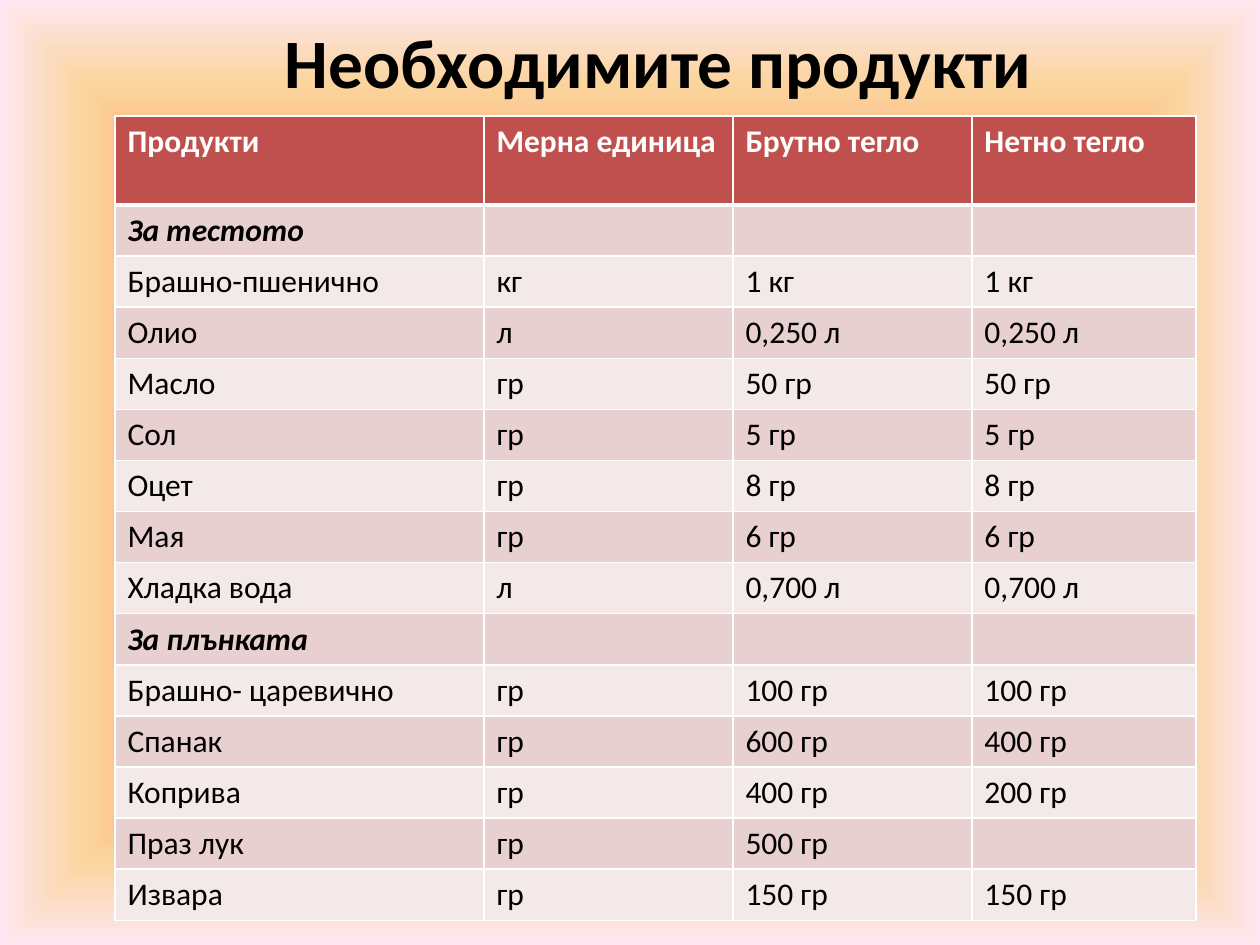
from lxml import etree
from pptx import Presentation
from pptx import util as u
from pptx.dml.color import RGBColor
from pptx.enum import text
from pptx.oxml import ns

TITLE = "Нeобходимите продукти"
HEADER = ("Продукти", "Мерна единица", "Брутно тегло", "Нетно тегло")
SECTIONS = {
    "За тестото": [
        ("Брашно-пшенично", "кг", "1 кг", "1 кг"),
        ("Олио", "л", "0,250 л", "0,250 л"),
        ("Масло", "гр", "50 гр", "50 гр"),
        ("Сол", "гр", "5 гр", "5 гр"),
        ("Оцет", "гр", "8 гр", "8 гр"),
        ("Мая", "гр", "6 гр", "6 гр"),
        ("Хладка вода", "л", "0,700 л", "0,700 л"),
    ],
    "За плънката": [
        ("Брашно- царевично", "гр", "100 гр", "100 гр"),
        ("Спанак", "гр", "600 гр", "400 гр"),
        ("Коприва", "гр", "400 гр", "200 гр"),
        ("Праз лук", "гр", "500 гр", ""),
        ("Извара", "гр", "150 гр", "150 гр"),
    ],
}
COLORS = {"header": "C0504D", "odd": "E8D0D0", "even": "F4E9E9",
          "white": "FFFFFF", "black": "000000"}
GLOW = [(0, "FBEAC7"), (18, "FEE7F2"), (36, "FAC77D"),
        (61, "FBA97D"), (82, "FBD49C"), (100, "FEE7F2")]
FONT = "Calibri"
COLUMN_WIDTHS = (369, 249, 239, 224)
HEADER_HEIGHT, ROW_HEIGHT = 89, 51


def px(length):
    return u.Emu(round(length * 914400 / 126))


def add(parent, tag, **attributes):
    child = etree.SubElement(parent, ns.qn(tag))
    for name, value in attributes.items():
        child.set(name, str(value))
    return child


def paint_background(page):
    """Fill the page with a gradient that spreads from its centre."""
    page.background.fill.gradient()
    gradient = page.background._cSld.find(".//" + ns.qn("a:gradFill"))
    for child in list(gradient):
        gradient.remove(child)
    stops = add(gradient, "a:gsLst")
    for position, color in GLOW:
        add(add(stops, "a:gs", pos=position * 1000), "a:srgbClr", val=color)
    add(add(gradient, "a:path", path="shape"), "a:fillToRect",
        l=50000, t=50000, r=50000, b=50000)


def set_font(para, size, color, bold=False, italic=False):
    font = para.font
    font.name, font.size = FONT, u.Pt(size)
    font.bold, font.italic = bold, italic
    font.color.rgb = RGBColor.from_string(COLORS[color])


def add_borders(cell, top, bottom):
    properties = cell._tc.get_or_add_tcPr()
    for side, width in (("L", 1), ("R", 1), ("T", top), ("B", bottom)):
        line = add(properties, f"a:ln{side}", w=u.Pt(width))
        add(add(line, "a:solidFill"), "a:srgbClr", val=COLORS["white"])


def add_title(page):
    title = page.shapes.title
    title.left, title.top, title.width, title.height = map(px, (123, 16, 1071, 90))
    title.text_frame.text = TITLE
    title.text_frame.vertical_anchor = text.MSO_ANCHOR.MIDDLE
    para = title.text_frame.paragraphs[0]
    para.alignment = text.PP_ALIGN.CENTER
    set_font(para, 39.6, "black", bold=True)


def add_products(page):
    rows = [HEADER]
    for section, products in SECTIONS.items():
        rows += [(section, "", "", ""), *products]
    heights = [HEADER_HEIGHT] + [ROW_HEIGHT] * (len(rows) - 1)
    table = page.shapes.add_table(
        len(rows), len(HEADER), px(115), px(116),
        px(sum(COLUMN_WIDTHS)), px(sum(heights))).table
    for column, width in zip(table.columns, COLUMN_WIDTHS):
        column.width = px(width)
    for r, (values, height) in enumerate(zip(rows, heights)):
        table.rows[r].height = px(height)
        is_header, is_section = r == 0, values[0] in SECTIONS
        fill = "header" if is_header else "odd" if r % 2 else "even"
        for c, value in enumerate(values):
            cell = table.cell(r, c)
            cell.text = value
            set_font(cell.text_frame.paragraphs[0], 18,
                     "white" if is_header else "black",
                     bold=is_header or is_section, italic=is_section)
            add_borders(cell, top=3 if r == 1 else 1, bottom=3 if is_header else 1)
            cell.fill.solid()
            cell.fill.fore_color.rgb = RGBColor.from_string(COLORS[fill])


def main():
    deck = Presentation()
    deck.slide_width, deck.slide_height = px(1260), px(945)
    page = deck.slides.add_slide(deck.slide_layouts[5])
    paint_background(page)
    add_title(page)
    add_products(page)
    deck.save("out.pptx")


if __name__ == "__main__":
    main()
